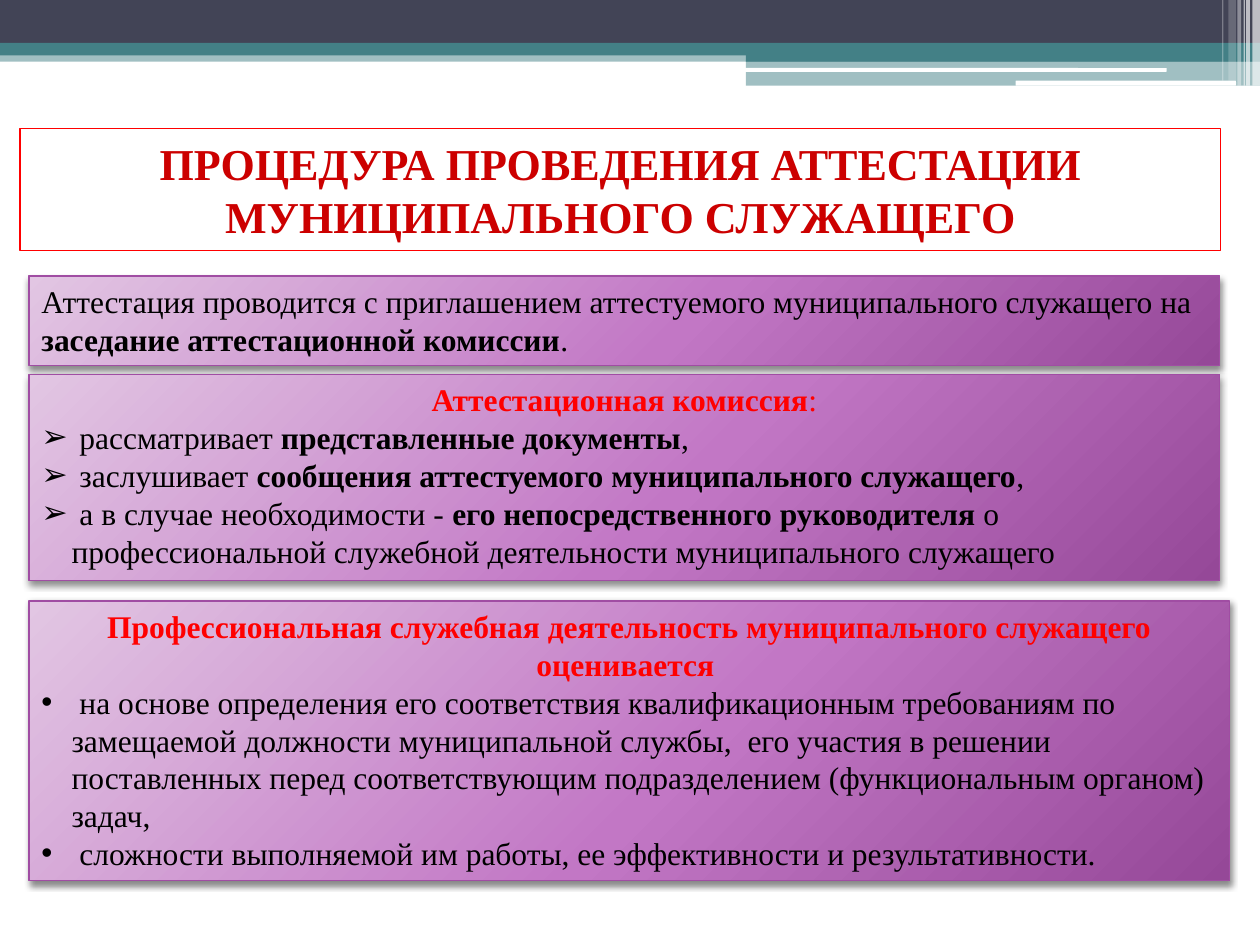
from lxml.etree import SubElement
from pptx import Presentation
from pptx.dml.color import RGBColor
from pptx.enum.shapes import MSO_SHAPE as Shape
from pptx.enum.text import MSO_ANCHOR as Anchor, MSO_AUTO_SIZE as AutoSize, PP_ALIGN as Align
from pptx.oxml import parse_xml
from pptx.oxml.ns import nsdecls, qn
from pptx.util import Inches, Pt

THEME = {
    "font": "Times New Roman", "title_size": 25.2, "body_size": 18,
    "title": "CC0000", "heading": "FF0000", "text": "000000",
    "navy": "424456", "teal": "438086", "white": "FFFFFF",
    "title_line": "FF0000", "panel_line": "A04DA3", "shadow": "000000",
    "gradient": [(0, "E2C6E3"), (55, "C277C5"), (100, "954898")],
}

BANDS = [
    (0, 0.4, 10, 0.09, "teal", 50),
    (0, 0, 10, 0.34, "navy", 100),
    (0, 0.34, 10, 0.1, "teal", 100),
    (5.92, 0.39, 4.08, 0.1, "teal", 100),
    (5.92, 0.48, 4.08, 0.2, "teal", 50),
]
ROUNDED_STRIPS = [
    (5.91, 0.54, 3.35, 0.03, "white", 100),
    (8.06, 0.64, 1.75, 0.04, "white", 100),
]
CORNER_STRIPES = [
    (9.94, 0.06, 0.68, 65), (9.89, 0.03, 0.68, 65), (9.87, 0.01, 0.68, 60),
    (9.82, 0.03, 0.68, 40), (9.75, 0.06, 0.64, 20), (9.7, 0.01, 0.64, 30),
]

TITLE = "ПРОЦЕДУРА ПРОВЕДЕНИЯ АТТЕСТАЦИИ МУНИЦИПАЛЬНОГО СЛУЖАЩЕГО"
PANELS = [
    {"box": (0.23, 2.19, 9.45, 0.71), "bullet": None, "heading": [], "items": [
        ["Аттестация проводится с приглашением аттестуемого муниципального служащего на ",
         "заседание аттестационной комиссии", "."],
    ]},
    {"box": (0.23, 2.97, 9.45, 1.64), "bullet": "➢",
     "heading": [("Аттестационная комиссия", True), (":", False)], "items": [
        [" рассматривает ", "представленные документы", ","],
        [" заслушивает ", "сообщения аттестуемого муниципального служащего", ","],
        [" а в случае необходимости - ", "его непосредственного руководителя",
         " о профессиональной служебной деятельности муниципального служащего"],
    ]},
    {"box": (0.23, 4.77, 9.53, 2.22), "bullet": "•",
     "heading": [("Профессиональная служебная деятельность муниципального служащего оценивается ", True)],
     "items": [
        [" на основе определения его соответствия квалификационным требованиям по замещаемой "
         "должности муниципальной службы,  его участия в решении поставленных перед "
         "соответствующим подразделением (функциональным органом) задач,"],
        [" сложности выполняемой им работы, ее эффективности и результативности."],
    ]},
]


def color(name):
    return RGBColor.from_string(THEME[name])


def add_box(slide, box, kind=Shape.RECTANGLE, fill=None, opacity=100, line=None):
    shape = slide.shapes.add_shape(kind, *map(Inches, box))
    shape.shadow.inherit = False
    if fill:
        shape.fill.solid()
        shape.fill.fore_color.rgb = color(fill)
        if opacity < 100:
            solid_color = shape._element.spPr.find(".//" + qn("a:srgbClr"))
            SubElement(solid_color, qn("a:alpha"), val=str(opacity * 1000))
    else:
        shape.fill.background()
    if line:
        shape.line.color.rgb = color(line)
        shape.line.width = Pt(0.75)
    else:
        shape.line.fill.background()
    return shape


def style_panel(shape):
    properties = shape._element.spPr
    stops = "".join(
        f'<a:gs pos="{position * 1000}"><a:srgbClr val="{value}"/></a:gs>'
        for position, value in THEME["gradient"])
    gradient = parse_xml(
        f'<a:gradFill {nsdecls("a")} rotWithShape="1"><a:gsLst>{stops}</a:gsLst>'
        '<a:path path="circle"><a:fillToRect l="-40000" t="-90000" r="140000" b="190000"/>'
        '</a:path></a:gradFill>')
    properties.replace(properties.find(qn("a:noFill")), gradient)
    shadow = SubElement(
        properties.find(qn("a:effectLst")), qn("a:outerShdw"), blurRad=str(Pt(4)),
        dist=str(Pt(2)), dir="5400000", algn="ctr", rotWithShape="0")
    shadow_color = SubElement(shadow, qn("a:srgbClr"), val=THEME["shadow"])
    SubElement(shadow_color, qn("a:alpha"), val="45000")


def write_text(paragraph, runs, size="body_size", fill="text", align=Align.LEFT, bullet=None):
    paragraph.alignment = align
    for text, bold in runs:
        run = paragraph.add_run()
        run.text = text
        run.font.name = THEME["font"]
        run.font.size = Pt(THEME[size])
        run.font.bold = bold
        run.font.color.rgb = color(fill)
    if bullet:
        properties = paragraph._p.get_or_add_pPr()
        properties.set("marL", str(Inches(0.24)))
        properties.set("indent", str(Inches(-0.24)))
        SubElement(properties, qn("a:buFont"), typeface="Arial")
        SubElement(properties, qn("a:buChar"), char=bullet)


def add_panel(slide, panel):
    shape = add_box(slide, panel["box"], line="panel_line")
    style_panel(shape)
    frame = shape.text_frame
    frame.word_wrap = True
    frame.auto_size = AutoSize.SHAPE_TO_FIT_TEXT
    frame.vertical_anchor = Anchor.TOP
    paragraph = frame.paragraphs[0]
    if panel["heading"]:
        write_text(paragraph, panel["heading"], fill="heading", align=Align.CENTER)
    for index, item in enumerate(panel["items"]):
        if index or panel["heading"]:
            paragraph = frame.add_paragraph()
        runs = [(text, position == 1) for position, text in enumerate(item)]
        write_text(paragraph, runs, bullet=panel["bullet"])


def main():
    presentation = Presentation()
    presentation.slide_width, presentation.slide_height = Inches(10), Inches(7.5)
    slide = presentation.slides.add_slide(presentation.slide_layouts[6])

    for *box, fill, opacity in BANDS:
        add_box(slide, box, fill=fill, opacity=opacity)
    for *box, fill, opacity in ROUNDED_STRIPS:
        add_box(slide, box, kind=Shape.ROUNDED_RECTANGLE, fill=fill, opacity=opacity)
    for left, width, height, opacity in CORNER_STRIPES:
        add_box(slide, (left, 0, width, height), fill="white", opacity=opacity)

    title = add_box(slide, (0.16, 1.02, 9.53, 0.97), line="title_line")
    title.text_frame.word_wrap = True
    title.text_frame.vertical_anchor = Anchor.MIDDLE
    write_text(title.text_frame.paragraphs[0], [(TITLE, True)],
               size="title_size", fill="title", align=Align.CENTER)

    for panel in PANELS:
        add_panel(slide, panel)
    presentation.save("out.pptx")


if __name__ == "__main__":
    main()
